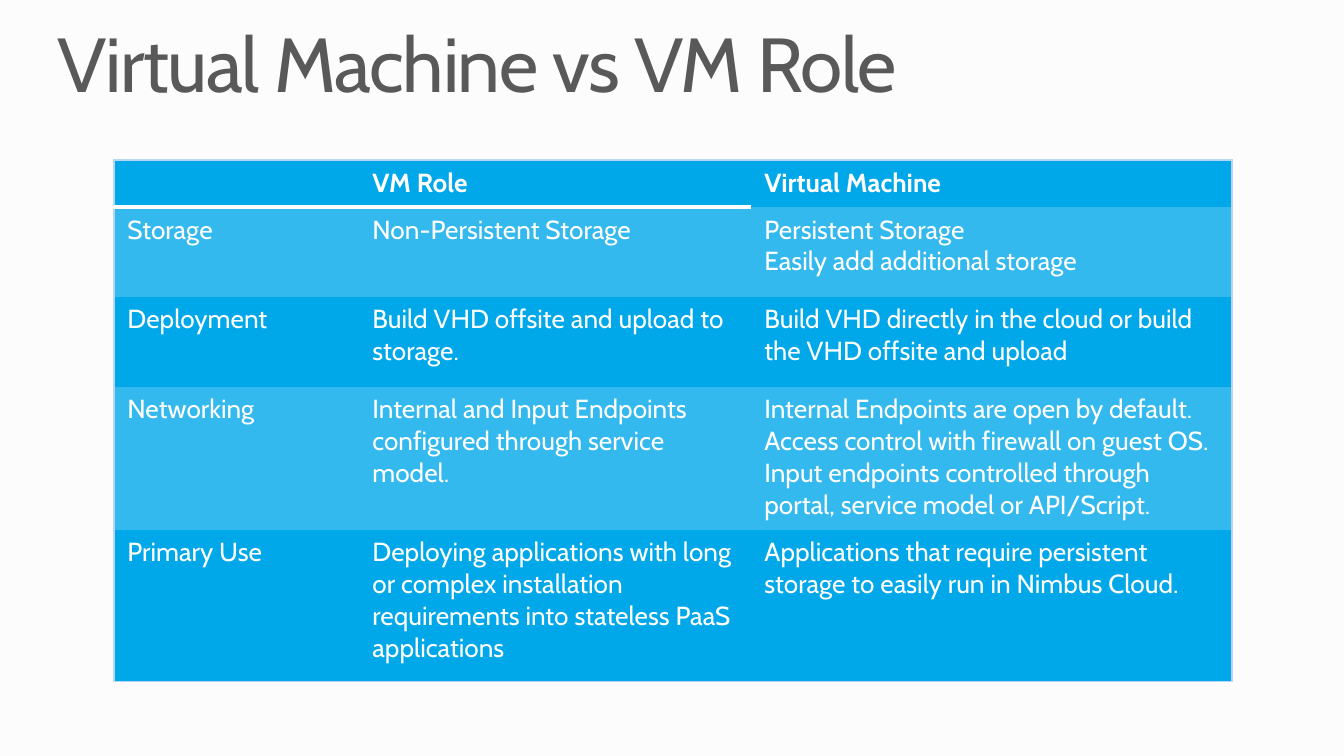
"""Build a slide with a table comparing VM Role and Virtual Machine."""
import pptx
import pptx.dml.color
import pptx.enum.text
import pptx.oxml
import pptx.oxml.ns
import pptx.util

TITLE = "Virtual Machine vs VM Role"
ROWS = [
    ("", "VM Role", "Virtual Machine"),
    ("Storage", "Non-Persistent Storage",
     "Persistent Storage\nEasily add additional storage"),
    ("Deployment", "Build VHD offsite and upload to storage.",
     "Build VHD directly in the cloud or build the VHD offsite and upload"),
    ("Networking",
     "Internal and Input Endpoints configured through service model.",
     "Internal Endpoints are open by default.\n"
     "Access control with firewall on guest OS. Input endpoints controlled "
     "through portal, service model or API/Script."),
    ("Primary Use",
     "Deploying applications with long or complex installation requirements "
     "into stateless PaaS applications",
     "Applications that require persistent storage to easily run in Nimbus Cloud."),
]
COLUMN_WIDTHS = [245, 392, 481]
ROW_HEIGHTS = [47, 90, 90, 143, 152]
TABLE_LEFT, TABLE_TOP = 114, 160
TITLE_BOX = (58, 26, 1230, 83)
COLORS = {
    "background": "FCFCFC", "title": "595959", "text": "FFFFFF",
    "row": "00A8EA", "band": "33B9EE", "outline": "B7D6F3", "rule": "FFFFFF",
}
FONT = "Cabin"
NO_GRID_STYLE = "{2D5ABB26-0587-4C30-8999-92F81FD0307C}"


def px(length):
    return pptx.util.Emu(round(length * 914400 / 134.4))


def rgb(name):
    return pptx.dml.color.RGBColor.from_string(COLORS[name])


def style_font(font, size, color, bold=False):
    font.name = FONT
    font.size = pptx.util.Pt(size)
    font.bold = bold
    font.color.rgb = rgb(color)


def add_border(cell, side, color, points):
    cell._tc.get_or_add_tcPr().append(pptx.oxml.parse_xml(
        f'<a:ln{side} {pptx.oxml.ns.nsdecls("a")} w="{pptx.util.Pt(points)}">'
        f'<a:solidFill><a:srgbClr val="{COLORS[color]}"/></a:solidFill>'
        f'</a:ln{side}>'))


def add_title(slide):
    title = slide.shapes.title
    title.left, title.top, title.width, title.height = map(px, TITLE_BOX)
    frame = title.text_frame
    frame.text = TITLE
    frame.margin_left = frame.margin_right = frame.margin_top = frame.margin_bottom = 0
    frame.vertical_anchor = pptx.enum.text.MSO_ANCHOR.TOP
    heading = frame.paragraphs[0]
    heading.alignment = pptx.enum.text.PP_ALIGN.LEFT
    heading.line_spacing = 0.9
    style_font(heading.runs[0].font, 41, "title")
    heading.runs[0].font._element.set("spc", "-80")


def add_comparison(slide):
    last_row, last_column = len(ROWS) - 1, len(COLUMN_WIDTHS) - 1
    comparison = slide.shapes.add_table(
        len(ROWS), len(COLUMN_WIDTHS), px(TABLE_LEFT), px(TABLE_TOP),
        px(sum(COLUMN_WIDTHS)), px(sum(ROW_HEIGHTS))).table
    comparison.first_row = comparison.horz_banding = False
    comparison._tbl.tblPr.find(pptx.oxml.ns.qn("a:tableStyleId")).text = NO_GRID_STYLE
    for column, width in zip(comparison.columns, COLUMN_WIDTHS):
        column.width = px(width)
    for row, height in zip(comparison.rows, ROW_HEIGHTS):
        row.height = px(height)
    for r, entries in enumerate(ROWS):
        for c, entry in enumerate(entries):
            cell = comparison.cell(r, c)
            cell.text_frame.text = entry
            for paragraph in cell.text_frame.paragraphs:
                style_font(paragraph.font, 14, "text", bold=r == 0)
                for run in paragraph.runs:
                    style_font(run.font, 14, "text", bold=r == 0)
            outer_sides = [("L", c == 0), ("R", c == last_column),
                           ("T", r == 0), ("B", r == last_row)]
            for side, is_outer in outer_sides:
                if is_outer:
                    add_border(cell, side, "outline", 0.75)
            if r == 0 and c < last_column:
                add_border(cell, "B", "rule", 3)
            cell.fill.solid()
            cell.fill.fore_color.rgb = rgb("band" if r % 2 else "row")


def main():
    deck = pptx.Presentation()
    deck.slide_width, deck.slide_height = px(1344), px(756)
    slide = deck.slides.add_slide(deck.slide_layouts[5])
    slide.background.fill.solid()
    slide.background.fill.fore_color.rgb = rgb("background")
    add_title(slide)
    add_comparison(slide)
    deck.save("out.pptx")


if __name__ == "__main__":
    main()
